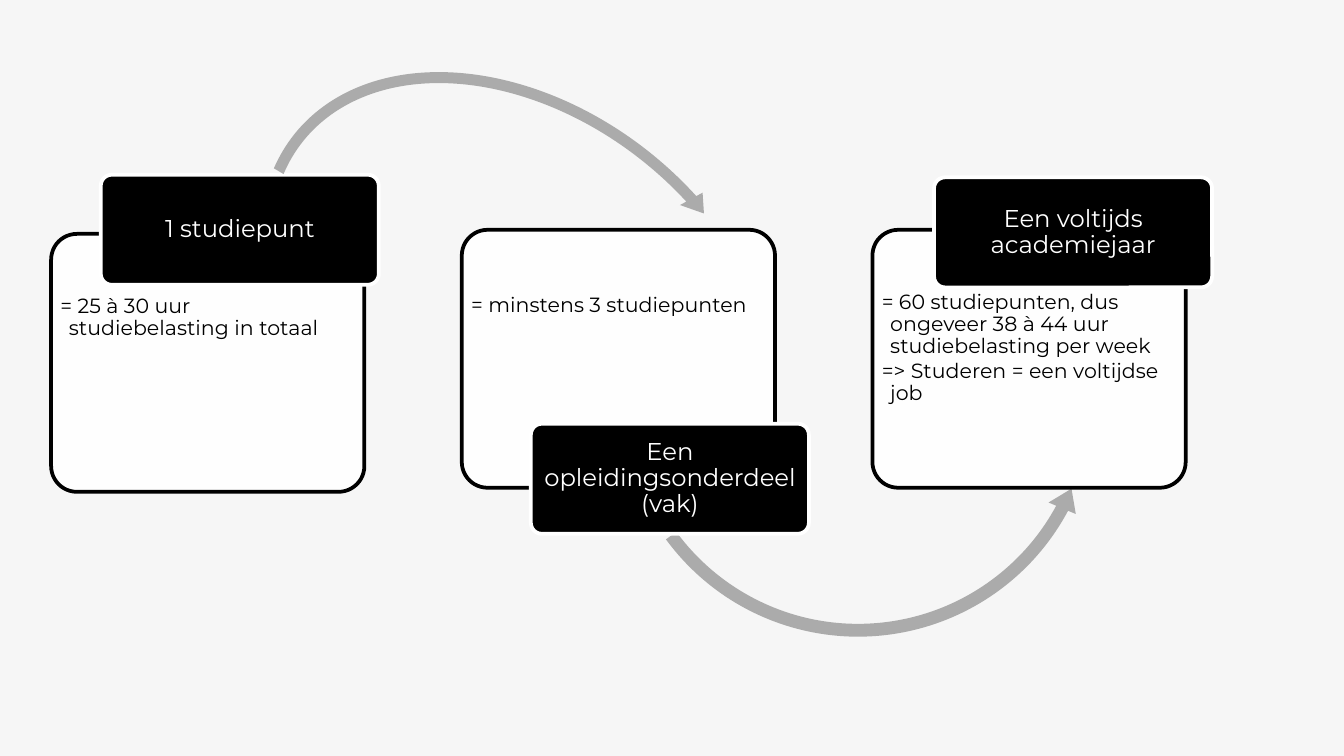
from dataclasses import dataclass

from lxml.etree import SubElement
from pptx import Presentation
from pptx.dml.color import RGBColor
from pptx.enum.shapes import MSO_SHAPE
from pptx.enum.text import MSO_ANCHOR, PP_ALIGN
from pptx.oxml.ns import qn
from pptx.util import Pt


@dataclass(frozen=True)
class Theme:
    background: str = "F6F6F6"
    dark: str = "000000"
    light: str = "FFFFFF"
    arrow: str = "ABABAB"
    font: str = "Montserrat"
    label_size: int = 13
    body_size: int = 11


THEME = Theme()

# Card grid, in points
FIRST_CARD_LEFT, CARD_STEP = 27.4, 220
CARD_WIDTH, CARD_HEIGHT = 167.8, 138.2
LABEL_WIDTH, LABEL_HEIGHT = 149, 59

# Card top, space above the text, text, label position, label
STEPS = [
    (125.3, 29.1, ["= 25 à 30 uur studiebelasting in totaal"],
     (54, 93.6), "1 studiepunt"),
    (123.1, 30.5, ["= minstens 3 studiepunten"],
     (284.4, 227), "Een opleidingsonderdeel (vak)"),
    (123.1, 29.1, ["= 60 studiepunten, dus ongeveer 38 à 44 uur studiebelasting per week",
                   "=> Studeren = een voltijdse job"],
     (500.4, 95), "Een voltijds academiejaar"),
]

# Kind, box, rotation, adjustments
ARROWS = [
    (MSO_SHAPE.LEFT_CIRCULAR_ARROW, (327.6, 81.4, 264.2, 264.2), 313.5,
     (0.026, 3.21, 44.86, 114.14, 0.03)),
    (MSO_SHAPE.CIRCULAR_ARROW, (120.2, 53.3, 316.8, 229.7), 38.4,
     (0.026, 3.16, 172.64, 103.31, 0.03)),
]


def add_shape(slide, kind, box, fill, line=None, adjustments=(), rotation=0):
    shape = slide.shapes.add_shape(kind, *[Pt(length) for length in box])
    shape.shadow.inherit = False
    shape.rotation = rotation
    for index, value in enumerate(adjustments):
        shape.adjustments[index] = value
    shape.fill.solid()
    shape.fill.fore_color.rgb = RGBColor.from_string(fill)
    if line:
        shape.line.color.rgb = RGBColor.from_string(line)
        shape.line.width = Pt(2)
    else:
        shape.line.fill.background()
    return shape


def set_text(shape, paragraphs, *, size, color, align, anchor, margins,
             hanging=0, space_after=0):
    frame = shape.text_frame
    frame.word_wrap = True
    frame.vertical_anchor = anchor
    (frame.margin_left, frame.margin_top,
     frame.margin_right, frame.margin_bottom) = [Pt(margin) for margin in margins]
    for index, text in enumerate(paragraphs):
        paragraph = frame.paragraphs[0] if index == 0 else frame.add_paragraph()
        paragraph.alignment = align
        paragraph.line_spacing = 0.9
        paragraph.space_after = Pt(space_after)
        if hanging:
            properties = paragraph._p.get_or_add_pPr()
            properties.set("marL", str(Pt(hanging)))
            properties.set("indent", str(-Pt(hanging)))
        run = paragraph.add_run()
        run.text = text
        run.font.name = THEME.font
        run.font.size = Pt(size)
        run.font.color.rgb = RGBColor.from_string(color)


def set_opacity(shape, percent):
    color = shape._element.spPr.find(qn("a:solidFill"))[0]
    SubElement(color, qn("a:alpha")).set("val", str(percent * 1000))


def add_card(slide, left, top, text_offset, paragraphs):
    card = add_shape(slide, MSO_SHAPE.ROUNDED_RECTANGLE,
                     (left, top, CARD_WIDTH, CARD_HEIGHT),
                     THEME.light, THEME.dark, (0.1,))
    set_opacity(card, 90)
    set_text(card, paragraphs, size=THEME.body_size, color=THEME.dark,
             align=PP_ALIGN.LEFT, anchor=MSO_ANCHOR.TOP,
             margins=(1, text_offset, 1, 1), hanging=4.5, space_after=1.5)


def add_label(slide, position, text):
    label = add_shape(slide, MSO_SHAPE.ROUNDED_RECTANGLE,
                      (*position, LABEL_WIDTH, LABEL_HEIGHT),
                      THEME.dark, THEME.light, (0.1,))
    set_text(label, [text], size=THEME.label_size, color=THEME.light,
             align=PP_ALIGN.CENTER, anchor=MSO_ANCHOR.MIDDLE,
             margins=(2, 1, 2, 1))


def main():
    presentation = Presentation()
    presentation.slide_width, presentation.slide_height = Pt(720), Pt(405)
    slide = presentation.slides.add_slide(presentation.slide_layouts[6])
    slide.background.fill.solid()
    slide.background.fill.fore_color.rgb = RGBColor.from_string(THEME.background)

    # Each step: card, arrow to the next step, label on top
    for index, (top, text_offset, paragraphs, position, label) in enumerate(STEPS):
        add_card(slide, FIRST_CARD_LEFT + index * CARD_STEP, top, text_offset, paragraphs)
        if index < len(ARROWS):
            kind, box, rotation, adjustments = ARROWS[index]
            add_shape(slide, kind, box, THEME.arrow,
                      adjustments=adjustments, rotation=rotation)
        add_label(slide, position, label)

    presentation.save("out.pptx")


if __name__ == "__main__":
    main()
